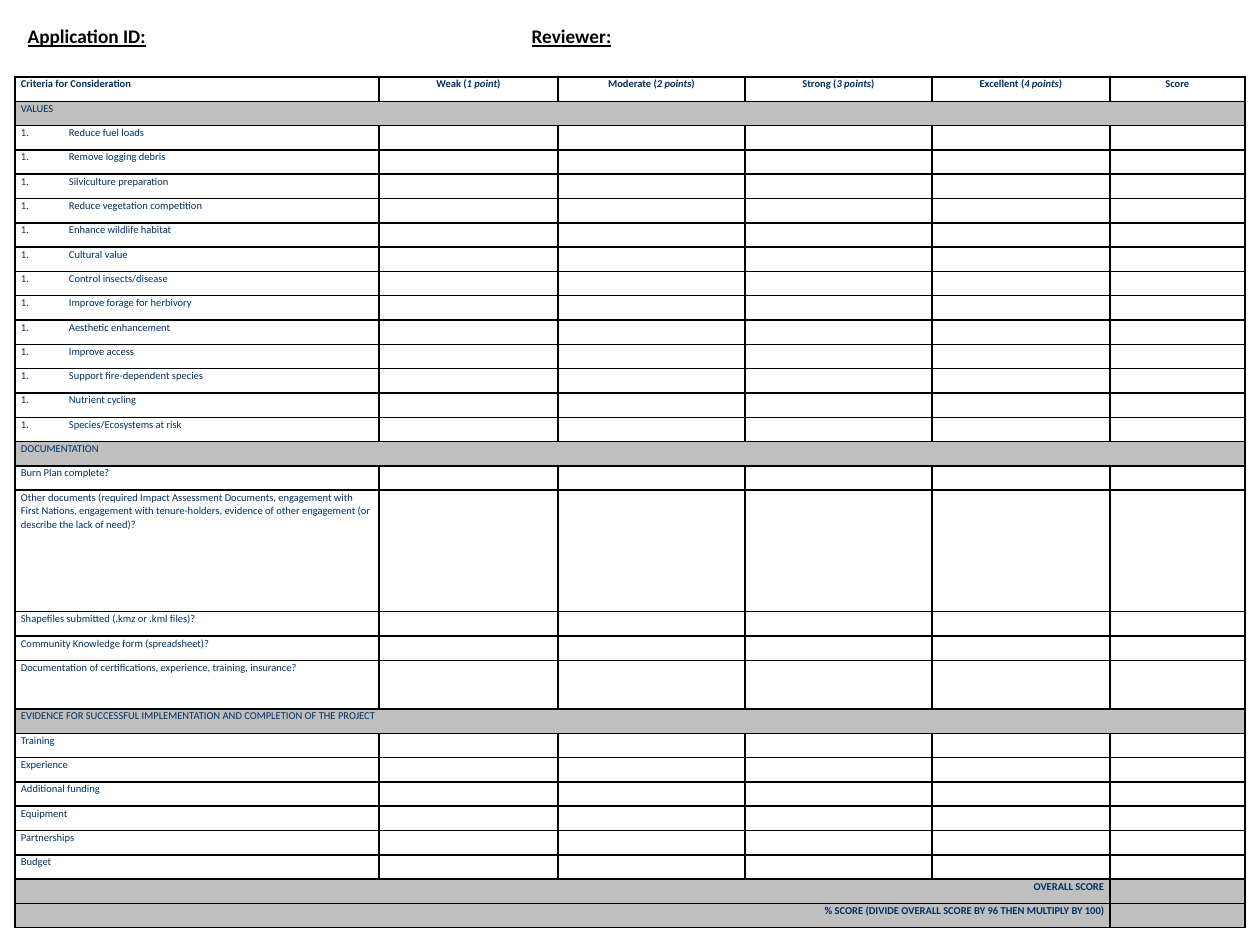
from lxml.etree import SubElement
from pptx import Presentation
from pptx.dml.color import RGBColor
from pptx.enum.text import MSO_ANCHOR, MSO_AUTO_SIZE, PP_ALIGN
from pptx.oxml import parse_xml
from pptx.oxml.ns import nsdecls, qn
from pptx.util import Pt

PX = 914400 / 126
FONT = "Calibri"
BLACK = RGBColor(0x00, 0x00, 0x00)
NAVY = RGBColor(0x00, 0x30, 0x62)
GREY = RGBColor(0xBF, 0xBF, 0xBF)

COLUMNS = [364, 179, 187, 187, 178, 135]
GRADES = [("Weak", "1 point"), ("Moderate", "2 points"),
          ("Strong", "3 points"), ("Excellent", "4 points")]
VALUES = ["Reduce fuel loads", "Remove logging debris", "Silviculture preparation",
          "Reduce vegetation competition", "Enhance wildlife habitat", "Cultural value",
          "Control insects/disease", "Improve forage for herbivory",
          "Aesthetic enhancement", "Improve access", "Support fire-dependent species",
          "Nutrient cycling", "Species/Ecosystems at risk"]
OTHER_DOCUMENTS = ("Other documents (required Impact Assessment Documents, engagement with "
                   "First Nations, engagement with tenure-holders, evidence of other "
                   "engagement (or describe the lack of need)?")
CERTIFICATIONS = "Documentation of certifications, experience, training, insurance?"
DOCUMENTS = ["Burn Plan complete?", OTHER_DOCUMENTS,
             "Shapefiles submitted (.kmz or .kml files)?",
             "Community Knowledge form (spreadsheet)?", CERTIFICATIONS]
EVIDENCE = ["Training", "Experience", "Additional funding", "Equipment",
            "Partnerships", "Budget"]
SECTIONS = [("VALUES", VALUES), ("DOCUMENTATION", DOCUMENTS),
            ("EVIDENCE FOR SUCCESSFUL IMPLEMENTATION AND COMPLETION OF THE PROJECT", EVIDENCE)]
TOTALS = ["OVERALL SCORE", "% SCORE (DIVIDE OVERALL SCORE BY 96 THEN MULTIPLY BY 100)"]
ROW_UNITS = {OTHER_DOCUMENTS: 5, CERTIFICATIONS: 2}


def px(n):
    """Turn px into EMU."""
    return round(n * PX)


def add_run(p, text, size, color, bold=False, italic=False, underline=False):
    """Add one formatted run to a paragraph."""
    r = p.add_run()
    r.text = text
    f = r.font
    f.name, f.size, f.bold, f.italic, f.underline = FONT, Pt(size), bold, italic, underline
    f.color.rgb = color


def set_tabs(p, stops):
    """Give a paragraph left tab stops in px."""
    tabs = SubElement(p._p.get_or_add_pPr(), qn("a:tabLst"))
    for stop in stops:
        SubElement(tabs, qn("a:tab"), pos=str(px(stop)), algn="l")


def add_heading(s, x, y, w, h):
    """Place the underlined fill-in line in the title placeholder."""
    sp = s.shapes.title
    sp.left, sp.top, sp.width, sp.height = px(x), px(y), px(w), px(h)
    tf = sp.text_frame
    tf.word_wrap, tf.auto_size = True, MSO_AUTO_SIZE.NONE
    tf.vertical_anchor = MSO_ANCHOR.MIDDLE
    lines = [([504, w - 27], [("Application ID:", True), ("\t", False),
                              ("Reviewer:", True), ("\t", True)]),
             ([323], [("\t", True)])]
    for i, (stops, runs) in enumerate(lines):
        p = tf.add_paragraph() if i else tf.paragraphs[0]
        set_tabs(p, stops)
        p.alignment = PP_ALIGN.LEFT
        for text, underline in runs:
            add_run(p, text, 11, BLACK, bold=True, underline=underline)


def style_cell(cell, fill=None):
    """Set the margins, borders, fill and base text size of a cell."""
    cell.margin_left = cell.margin_right = px(6)
    cell.margin_top = cell.margin_bottom = 0
    tcPr = cell._tc.get_or_add_tcPr()
    for side in ("lnL", "lnR", "lnT", "lnB"):
        tcPr.append(parse_xml(
            f'<a:{side} {nsdecls("a")} w="12700"><a:solidFill>'
            f'<a:srgbClr val="{BLACK}"/></a:solidFill></a:{side}>'))
    if fill is None:
        cell.fill.background()
    else:
        cell.fill.solid()
        cell.fill.fore_color.rgb = fill
    SubElement(cell.text_frame.paragraphs[0]._p, qn("a:endParaRPr"), sz="600")


def write_cell(cell, runs, align=PP_ALIGN.LEFT, bold=False, numbered=False):
    """Write (text, italic) runs into a cell."""
    p = cell.text_frame.paragraphs[0]
    if numbered:
        pPr = p._p.get_or_add_pPr()
        pPr.set("marL", str(px(48)))
        pPr.set("indent", str(-px(48)))
        SubElement(pPr, qn("a:buFont"), typeface="+mj-lt")
        SubElement(pPr, qn("a:buAutoNum"), type="arabicPeriod")
    p.alignment, p.line_spacing = align, 1.07
    for text, italic in runs:
        add_run(p, text, 6, NAVY, bold, italic)


def add_score_table(s, x, y, w, h):
    """Place the scoring table with its sections and totals."""
    rows = [("header", "Criteria for Consideration")]
    for title, items in SECTIONS:
        rows.append(("section", title))
        rows += [("numbered" if items is VALUES else "item", item) for item in items]
    rows += [("total", text) for text in TOTALS]
    units = [ROW_UNITS.get(text, 1) for _, text in rows]

    table = s.shapes.add_table(len(rows), len(COLUMNS), px(x), px(y), px(w), px(h)).table
    table.first_row = table.horz_banding = False
    for column, width in zip(table.columns, COLUMNS):
        column.width = px(width)
    for i, (kind, text) in enumerate(rows):
        table.rows[i].height = px(h * units[i] / sum(units))
        cells = [table.cell(i, j) for j in range(len(COLUMNS))]
        for cell in cells:
            style_cell(cell, GREY if kind in ("section", "total") else None)
        if kind == "section":
            cells[0].merge(cells[-1])
        elif kind == "total":
            cells[0].merge(cells[-2])
        write_cell(cells[0], [(text, False)],
                   PP_ALIGN.RIGHT if kind == "total" else PP_ALIGN.LEFT,
                   kind in ("header", "total"), kind == "numbered")

    heads = [[(f"{grade} (", False), (points, True), (")", False)] for grade, points in GRADES]
    heads.append([("Score", False)])
    for j, runs in enumerate(heads, 1):
        write_cell(table.cell(0, j), runs, PP_ALIGN.CENTER, bold=True)


def main():
    """Build the review form slide."""
    prs = Presentation()
    prs.slide_width, prs.slide_height = px(1260), px(945)
    s = prs.slides.add_slide(prs.slide_layouts[5])
    add_heading(s, 15, 29, 1230, 37)
    add_score_table(s, 15, 77, sum(COLUMNS), 851)
    prs.save("out.pptx")


if __name__ == "__main__":
    main()
